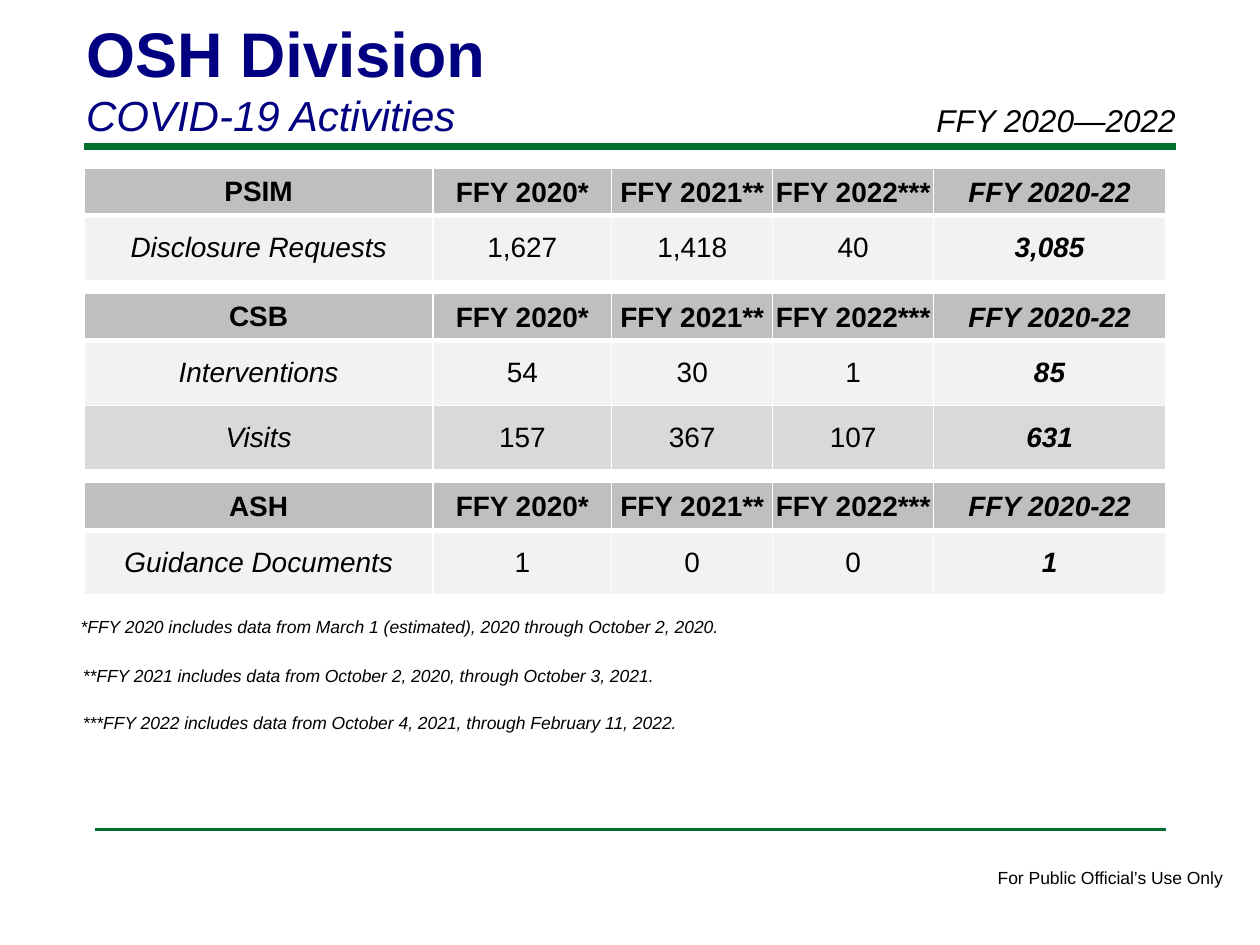
from lxml.etree import SubElement
from pptx import Presentation
from pptx.dml.color import RGBColor
from pptx.enum.shapes import MSO_CONNECTOR
from pptx.enum.text import MSO_ANCHOR, MSO_AUTO_SIZE, PP_ALIGN
from pptx.oxml.ns import qn
from pptx.util import Pt

NAVY, GREEN, BLACK, WHITE = "000080", "007030", "000000", "FFFFFF"
HEADER_FILL, BAND_FILLS = "BFBFBF", ("F2F2F2", "D9D9D9")
YEARS = ("FFY 2020*", "FFY 2021**", "FFY 2022***", "FFY 2020-22")
COLUMN_WIDTHS = (199.2, 102.2, 92, 92, 132.4)
HEADER_HEIGHT, ROW_HEIGHT, TABLE_GAP = 27.3, 36.9, 7.2

TABLES = {
    "PSIM": [("Disclosure Requests", "1,627", "1,418", "40", "3,085")],
    "CSB": [("Interventions", "54", "30", "1", "85"),
            ("Visits", "157", "367", "107", "631")],
    "ASH": [("Guidance Documents", "1", "0", "0", "1")],
}
# Left, top and wording of each footnote
NOTES = [
    (39, 348.5, "*FFY 2020 includes data from March 1 (estimated), 2020 through October 2, 2020."),
    (40.3, 376.5, "**FFY 2021 includes data from October 2, 2020, through October 3, 2021."),
    (40.3, 403.2, "***FFY 2022 includes data from October 4, 2021, through February 11, 2022."),
]


def color(code):
    return RGBColor.from_string(code)


def set_font(para, size, code=BLACK, bold=False, italic=False):
    font = para.font
    font.name, font.size = "Arial", Pt(size)
    font.bold, font.italic = bold, italic
    font.color.rgb = color(code)


def add_rule(page, left, right, top, weight):
    rule = page.shapes.add_connector(
        MSO_CONNECTOR.STRAIGHT, Pt(left), Pt(top), Pt(right), Pt(top))
    rule.line.color.rgb = color(GREEN)
    rule.line.width = Pt(weight)
    SubElement(rule._element.spPr, qn("a:effectLst"))


def add_text(page, left, top, width, height, text, size, italic=True, wrap=True):
    box = page.shapes.add_textbox(Pt(left), Pt(top), Pt(width), Pt(height))
    box.text_frame.word_wrap = wrap
    para = box.text_frame.paragraphs[0]
    para.text = text
    set_font(para, size, italic=italic)


def place_title(page, left, top, width, height):
    title = page.shapes.title
    title.left, title.top, title.width, title.height = map(Pt, (left, top, width, height))
    frame = title.text_frame
    frame.text = "OSH Division\nCOVID-19 Activities"
    frame.word_wrap = True
    frame.auto_size = MSO_AUTO_SIZE.NONE
    frame.vertical_anchor = MSO_ANCHOR.TOP
    heading, subtitle = frame.paragraphs
    set_font(heading, 36, NAVY, bold=True)
    set_font(subtitle, 24, NAVY, italic=True)
    for para in frame.paragraphs:
        para.alignment = PP_ALIGN.LEFT
        para.space_before = Pt(0)


def set_borders(cell, bottom):
    properties = cell._tc.get_or_add_tcPr()
    for side, weight in (("L", 1), ("R", 1), ("T", 1), ("B", bottom)):
        line = SubElement(properties, qn(f"a:ln{side}"), w=str(Pt(weight)))
        fill = SubElement(line, qn("a:solidFill"))
        SubElement(fill, qn("a:srgbClr"), val=WHITE)


def fill_cell(cell, text, fill, bold, italic, bottom):
    set_borders(cell, bottom)
    cell.fill.solid()
    cell.fill.fore_color.rgb = color(fill)
    cell.vertical_anchor = MSO_ANCHOR.MIDDLE
    cell.text = text
    para = cell.text_frame.paragraphs[0]
    para.alignment = PP_ALIGN.CENTER
    set_font(para, 16, bold=bold, italic=italic)


def add_activity_table(page, left, top, name, records):
    """Add one unit's table and return its height."""
    rows = [(name, *YEARS), *records]
    height = HEADER_HEIGHT + ROW_HEIGHT * len(records)
    table = page.shapes.add_table(
        len(rows), len(COLUMN_WIDTHS), Pt(left), Pt(top),
        Pt(sum(COLUMN_WIDTHS)), Pt(height)).table
    table.first_row = table.horz_banding = False
    for column, width in zip(table.columns, COLUMN_WIDTHS):
        column.width = Pt(width)
    last = len(COLUMN_WIDTHS) - 1
    for r, row in enumerate(rows):
        header = r == 0
        table.rows[r].height = Pt(HEADER_HEIGHT if header else ROW_HEIGHT)
        fill = HEADER_FILL if header else BAND_FILLS[(r - 1) % 2]
        for c, text in enumerate(row):
            cell = table.cell(r, c)
            italic = c == last or (c == 0 and not header)
            fill_cell(cell, text, fill, header or c == last, italic, 3 if header else 1)
            if header and c > 0:
                cell.margin_left = cell.margin_right = cell.margin_top = Pt(0.75)
                cell.margin_bottom = Pt(0)
    return height


def main():
    deck = Presentation()
    deck.slide_width, deck.slide_height = Pt(720), Pt(540)
    page = deck.slides.add_slide(deck.slide_layouts[5])

    # Rules and footer
    add_rule(page, 48, 672, 84, 4)
    add_rule(page, 54, 666, 474, 2)
    add_text(page, 563, 492, 145, 19.4, "For Public Official’s Use Only", 10,
             italic=False, wrap=False)

    # Heading and period
    place_title(page, 42, 4.5, 594, 80)
    add_text(page, 528, 54, 180, 29, "FFY 2020—2022", 18)

    # Stacked tables
    top = 96
    for name, records in TABLES.items():
        top += add_activity_table(page, 48.2, top, name, records) + TABLE_GAP

    # Footnotes
    for left, note_top, text in NOTES:
        add_text(page, left, note_top, 629, 19.4, text, 10)

    deck.save("out.pptx")


if __name__ == "__main__":
    main()
